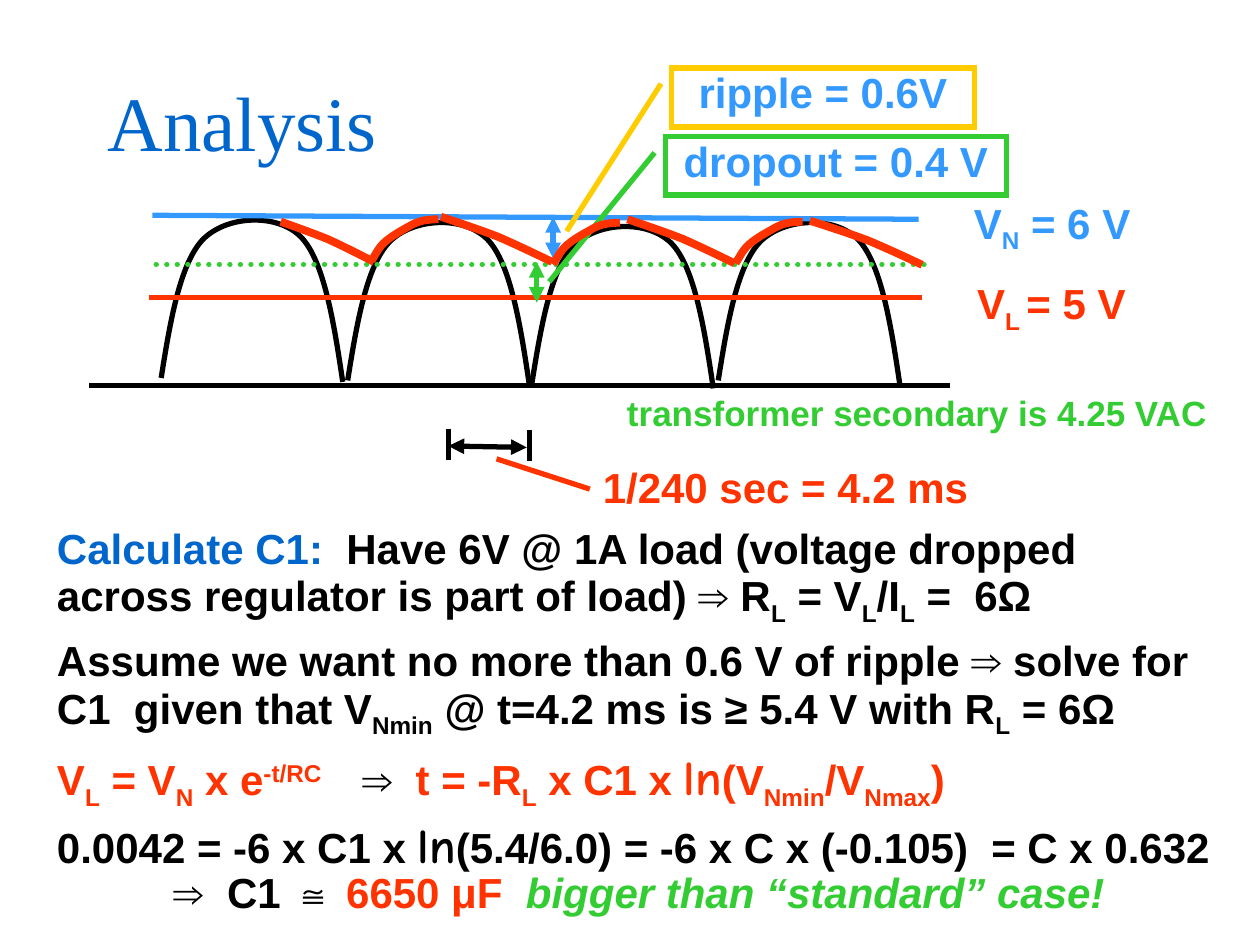
"""Build the rectifier ripple analysis slide with waveform and C1 calculation."""
from lxml import etree
from pptx import Presentation
from pptx import util as u
from pptx.dml.color import RGBColor
from pptx.enum import dml, shapes, text
from pptx.oxml.ns import qn

BLACK = RGBColor(0x00, 0x00, 0x00)
NAVY = RGBColor(0x00, 0x66, 0xCC)
BLUE = RGBColor(0x33, 0x99, 0xFF)
RED = RGBColor(0xFF, 0x33, 0x00)
GREEN = RGBColor(0x33, 0xCC, 0x33)
GOLD = RGBColor(0xFF, 0xCC, 0x00)

BODY = {"name": "Arial", "size": u.Pt(24), "bold": True}
STYLES = {
    "body": BODY,
    "sub": BODY,
    "sup": BODY,
    "title": {"name": "Times New Roman", "size": u.Pt(44)},
    "note": {**BODY, "size": u.Pt(20)},
    "log": {**BODY, "name": "Comic Neue", "size": u.Pt(28)},
    "slant": {**BODY, "italic": True},
}
BASELINES = {"sub": "-25000", "sup": "30000"}
CENTERED = {"alignment": text.PP_ALIGN.CENTER, "line_spacing": 0.85, "space_before": u.Pt(12)}
LEFT = {"alignment": text.PP_ALIGN.LEFT, "line_spacing": 0.85, "space_before": u.Pt(12)}
TIGHT = {**LEFT, "space_before": u.Pt(10)}
HEADING = {"alignment": text.PP_ALIGN.LEFT}


def write_paragraph(para, layout, spans):
    for key, value in layout.items():
        setattr(para, key, value)
    for content, color, style in spans:
        if content == "\v":
            para.add_line_break()
            continue
        span = para.add_run()
        span.text = content
        for key, value in STYLES[style].items():
            setattr(span.font, key, value)
        span.font.color.rgb = color
        if style in BASELINES:
            span._r.get_or_add_rPr().set("baseline", BASELINES[style])


def draw_curve(start, controls, scale, color, weight):
    corners = [(u.Cm(start[0] + x * scale[0]), u.Cm(start[1] + y * scale[1])) for x, y in controls]
    builder = page.shapes.build_freeform(*corners[0])
    builder.add_line_segments(corners[1:], close=False)
    curve = builder.convert_to_shape()
    outline = next(curve._element.iter(qn("a:path")))
    segments = outline.findall(qn("a:lnTo"))
    for first in range(0, len(segments), 3):
        bend = etree.SubElement(outline, qn("a:cubicBezTo"))
        for segment in segments[first:first + 3]:
            bend.append(segment[0])
            outline.remove(segment)
    curve.shadow.inherit = False
    curve.fill.background()
    curve.line.color.rgb = color
    curve.line.width = u.Pt(weight)


deck = Presentation()
deck.slide_width, deck.slide_height = u.Cm(25.4), u.Cm(19.05)
page = deck.slides.add_slide(deck.slide_layouts[6])

HUMP = [(0, 0), (0.18, -1.14), (0.38, -2.31), (0.84, -2.79), (1.32, -3.28), (2.34, -3.33),
        (2.82, -2.84), (3.28, -2.36), (3.48, -1.14), (3.66, 0.08)]
CHARGE = [(0, 0), (0.08, -0.13), (0.15, -0.28), (0.28, -0.39), (0.41, -0.5), (0.58, -0.6),
          (0.71, -0.67), (0.81, -0.73), (0.89, -0.77), (0.99, -0.8), (1.09, -0.83),
          (1.27, -0.84), (1.35, -0.84)]
DISCHARGE = [(0, 0), (0.17, 0.14), (0.34, 0.28), (0.51, 0.44), (0.67, 0.61), (0.84, 0.81), (1, 1)]

for start in [(3.25, 7.62), (7.01, 7.67), (10.72, 7.75), (14.48, 7.67)]:
    draw_curve(start, HUMP, (1, 1), BLACK, 3)

LINES = [
    (1.8, 7.77, 19.15, 7.77, BLACK, "solid"),
    (9.04, 8.64, 9.04, 9.27, BLACK, "solid"),
    (10.67, 8.66, 10.67, 9.3, BLACK, "solid"),
    (9.04, 8.99, 10.62, 9.02, BLACK, "arrows"),
    (10.01, 9.25, 11.89, 9.86, RED, "solid"),
    (3.07, 4.34, 18.52, 4.42, BLUE, "solid"),
    (3, 5.99, 18.59, 5.99, RED, "solid"),
    (11.15, 4.37, 11.15, 5.21, BLUE, "arrows"),
    (10.82, 5.28, 10.82, 6.1, GREEN, "arrows"),
    (3.15, 5.33, 18.75, 5.33, GREEN, "dots"),
]
for *ends, color, kind in LINES:
    line = page.shapes.add_connector(shapes.MSO_CONNECTOR.STRAIGHT, *map(u.Cm, ends))
    line.line.color.rgb = color
    line.line.width = u.Pt(3)
    properties = line._element.spPr
    stroke = properties.find(qn("a:ln"))
    if kind == "dots":
        line.line.dash_style = dml.MSO_LINE.ROUND_DOT
        stroke.set("cap", "rnd")
    if kind == "arrows":
        for end in ("a:headEnd", "a:tailEnd"):
            etree.SubElement(stroke, qn(end), type="triangle")
    etree.SubElement(properties, qn("a:effectLst"))

CALLOUTS = [
    ((13.54, 1.37, 6.1, 1.19), (0.268, -0.035, 2.766, -0.347), GOLD, "ripple = 0.6V"),
    ((13.41, 2.76, 6.88, 1.17), (0.274, -0.031, 2.498, -0.34), GREEN, "dropout = 0.4 V"),
]
for place, pointer, color, label in CALLOUTS:
    callout = page.shapes.add_shape(shapes.MSO_SHAPE.LINE_CALLOUT_1, *map(u.Cm, place))
    for index, value in enumerate(pointer):
        callout.adjustments[index] = value
    callout.shadow.inherit = False
    callout.fill.background()
    callout.line.color.rgb = color
    callout.line.width = u.Pt(3)
    etree.SubElement(callout._element.spPr.find(qn("a:ln")), qn("a:miter"), lim="800000")
    callout.text_frame.vertical_anchor = text.MSO_ANCHOR.TOP
    write_paragraph(callout.text_frame.paragraphs[0], CENTERED, [(label, BLUE, "body")])

for start in [(7.49, 5.26), (11.15, 5.33), (14.83, 5.31)]:
    draw_curve(start, CHARGE, (1, 1), RED, 4.5)
for x, y, width, height in [(5.66, 4.47, 1.88, 0.81), (8.89, 4.37, 2.24, 0.91),
                            (12.65, 4.42, 2.16, 0.89), (16.33, 4.45, 2.26, 0.89)]:
    draw_curve((x, y), DISCHARGE, (width, height), RED, 4.5)

LOAD = [
    ("Calculate C1:", NAVY, "body"),
    ("  Have 6V @ 1A load (voltage dropped across regulator is part of load) ⇒ R", BLACK, "body"),
    ("L", BLACK, "sub"), (" = V", BLACK, "body"), ("L", BLACK, "sub"), ("/I", BLACK, "body"),
    ("L", BLACK, "sub"), (" =  6Ω", BLACK, "body"),
]
ASSUMPTION = [
    ("Assume we want no more than 0.6 V of ripple ⇒ solve for C1  given that V", BLACK, "body"),
    ("Nmin", BLACK, "sub"), (" @ t=4.2 ms is ≥ 5.4 V with R", BLACK, "body"),
    ("L", BLACK, "sub"), (" = 6Ω", BLACK, "body"),
]
DECAY = [
    ("V", RED, "body"), ("L", RED, "sub"), (" = V", RED, "body"), ("N", RED, "sub"),
    (" x e", RED, "body"), ("-t/RC", RED, "sup"), ("\t⇒  ", BLACK, "body"),
    ("t = -R", RED, "body"), ("L", RED, "sub"), (" x C1 x ", RED, "body"), ("ln", RED, "log"),
    ("(V", RED, "body"), ("Nmin", RED, "sub"), ("/V", RED, "body"), ("Nmax", RED, "sub"),
    (")", RED, "body"),
]
RESULT = [
    ("0.0042 = -6 x C1 x ", BLACK, "body"), ("ln", BLACK, "log"),
    ("(5.4/6.0) = -6 x C x (-0.105)  = C x 0.632", BLACK, "body"), ("\v", BLACK, "body"),
    ("\t⇒  C1 ≅ ", BLACK, "body"), ("6650 μF  ", RED, "body"),
    ("bigger than “standard” case!", GREEN, "slant"),
]
BOXES = [
    ((1.92, 0.84, 21.59, 3.18), [(HEADING, None, [("Analysis", NAVY, "title")])]),
    ((11.48, 9.33, 8.71, 1.12), [(CENTERED, None, [("1/240 sec = 4.2 ms", RED, "body")])]),
    ((18.06, 5.54, 6.27, 1.12), [(CENTERED, None, [
        ("V", RED, "body"), ("L ", RED, "sub"), ("= 5 V", RED, "body")])]),
    ((18.16, 3.91, 6.1, 1.12), [(CENTERED, None, [
        ("V", BLUE, "body"), ("N", BLUE, "sub"), (" = 6 V", BLUE, "body")])]),
    ((0.9, 10.56, 23.98, 7.92), [
        (LEFT, None, LOAD), (LEFT, None, ASSUMPTION), (TIGHT, 6.15, DECAY), (TIGHT, 2.35, RESULT)]),
    ((12.39, 7.9, 13, 0.97), [(LEFT, None, [
        ("transformer secondary is 4.25 VAC", GREEN, "note")])]),
]
for place, paragraphs in BOXES:
    box = page.shapes.add_textbox(*map(u.Cm, place))
    heading = paragraphs[0][0] is HEADING
    frame_format = {
        "word_wrap": True,
        "auto_size": text.MSO_AUTO_SIZE.NONE if heading else text.MSO_AUTO_SIZE.SHAPE_TO_FIT_TEXT,
        "vertical_anchor": text.MSO_ANCHOR.MIDDLE if heading else text.MSO_ANCHOR.TOP,
    }
    for key, value in frame_format.items():
        setattr(box.text_frame, key, value)
    for number, (layout, tab, spans) in enumerate(paragraphs):
        para = box.text_frame.add_paragraph() if number else box.text_frame.paragraphs[0]
        write_paragraph(para, layout, spans)
        if tab:
            stops = etree.SubElement(para._p.get_or_add_pPr(), qn("a:tabLst"))
            etree.SubElement(stops, qn("a:tab"), pos=str(u.Cm(tab)), algn="l")

deck.save("out.pptx")
